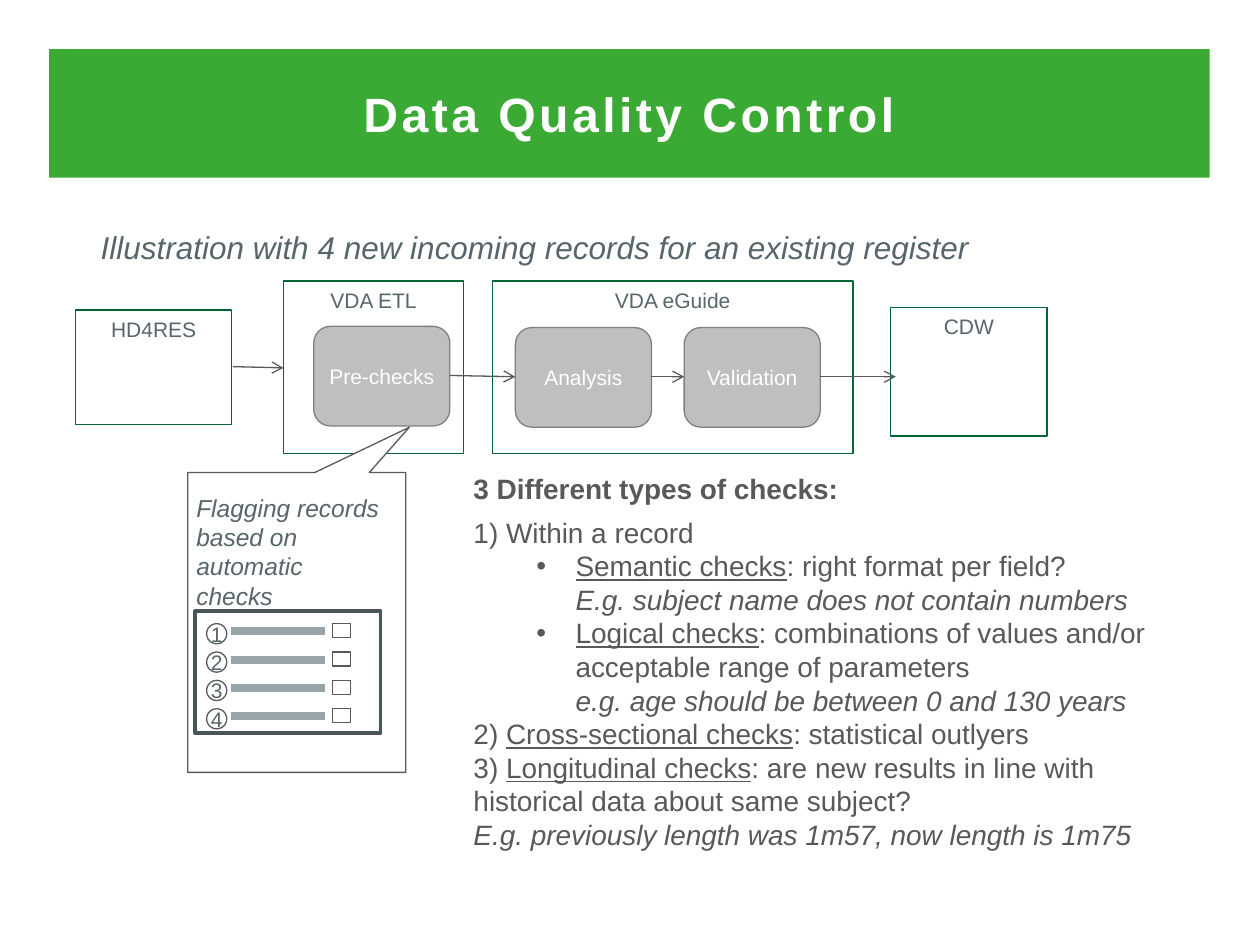
from lxml.etree import SubElement
from pptx import Presentation
from pptx.dml.color import RGBColor
from pptx.enum.shapes import MSO_CONNECTOR as Connector, MSO_SHAPE as Shape
from pptx.enum.text import MSO_ANCHOR as Anchor, MSO_AUTO_SIZE as AutoSize, PP_ALIGN as Align
from pptx.oxml.ns import qn
from pptx.util import Inches, Pt

WHITE = RGBColor(0xFF, 0xFF, 0xFF)
BAND_GREEN = RGBColor(0x3A, 0xAA, 0x35)
BOX_GREEN = RGBColor(0x00, 0x66, 0x33)
SLATE = RGBColor(0x58, 0x65, 0x6A)
DARK_SLATE = RGBColor(0x4A, 0x55, 0x59)
PALE_SLATE = RGBColor(0x97, 0xA4, 0xA9)
GRAY = RGBColor(0x58, 0x59, 0x5B)
STEP_FILL = RGBColor(0xBF, 0xBF, 0xBF)
STEP_LINE = RGBColor(0x80, 0x80, 0x80)

SYSTEMS = [
    ("VDA eGuide", (3.91, 2.23, 2.86, 1.37)),
    ("CDW", (7.07, 2.44, 1.24, 1.02)),
    ("VDA ETL", (2.25, 2.23, 1.43, 1.37)),
    ("HD4RES", (0.6, 2.46, 1.24, 0.91)),
]
STEPS = [("Pre-checks", 2.49, 2.59), ("Analysis", 4.09, 2.6), ("Validation", 5.43, 2.6)]
FLOWS = [
    ((1.85, 2.91), (2.25, 2.92)),
    ((3.57, 2.98), (4.09, 2.99)),
    ((5.17, 2.99), (5.43, 2.99)),
    ((6.51, 2.99), (7.11, 2.99)),
]
# Each paragraph: bulleted or not, then runs as (text, style letters b, i, u).
CHECKS = [
    (False, [("3 Different types of checks:", "b")]),
    (False, [("1) Within a record", "")]),
    (True, [("Semantic checks", "u"), (": right format per field? \n", ""),
            ("E.g. subject name does not contain numbers", "i")]),
    (True, [("Logical checks", "u"),
            (": combinations of values and/or acceptable range of parameters \n", ""),
            ("e.g. age should be between 0 and 130 years", "i")]),
    (False, [("2) ", ""), ("Cross-sectional checks", "u"), (": statistical outlyers", "")]),
    (False, [("3) ", ""), ("Longitudinal checks", "u"),
             (": are new results in line with historical data about same subject?\n", ""),
             ("E.g. previously length was 1m57, now length is 1m75", "i")]),
]


class SlideBuilder:
    font_name = "Arial"

    def __init__(self, slide):
        self.slide = slide

    def style(self, run, size, color, marks=""):
        font = run.font
        font.name, font.size = self.font_name, Pt(size)
        font.color.rgb = color
        font.bold, font.italic, font.underline = ("b" in marks, "i" in marks, "u" in marks)

    def label(self, frame, text, size, color, marks="", align=Align.CENTER, anchor=Anchor.TOP):
        frame.text = text
        frame.vertical_anchor = anchor
        paragraph = frame.paragraphs[0]
        paragraph.alignment = align
        self.style(paragraph.runs[0], size, color, marks)

    def shape(self, kind, box, fill=None, line=None, width=0.75):
        shape = self.slide.shapes.add_shape(kind, *map(Inches, box))
        shape.shadow.inherit = False
        if fill is None:
            shape.fill.background()
        else:
            shape.fill.solid()
            shape.fill.fore_color.rgb = fill
        if line is None:
            shape.line.fill.background()
        else:
            shape.line.color.rgb = line
            shape.line.width = Pt(width)
        return shape

    def text_box(self, box, wrap=True):
        frame = self.slide.shapes.add_textbox(*map(Inches, box)).text_frame
        frame.word_wrap = wrap
        frame.auto_size = AutoSize.NONE
        return frame

    def line(self, start, end, color, width=0.75, arrow=False):
        connector = self.slide.shapes.add_connector(
            Connector.STRAIGHT, *map(Inches, (*start, *end)))
        connector.line.color.rgb = color
        connector.line.width = Pt(width)
        properties = connector._element.spPr
        if arrow:
            SubElement(properties.find(qn("a:ln")), qn("a:tailEnd"), type="arrow")
        SubElement(properties, qn("a:effectLst"))

    def system(self, name, box):
        self.label(self.shape(Shape.RECTANGLE, box, line=BOX_GREEN).text_frame, name, 12, SLATE)

    def step(self, name, left, top):
        frame = self.shape(Shape.ROUNDED_RECTANGLE, (left, top, 1.08, 0.79),
                           STEP_FILL, STEP_LINE).text_frame
        frame.margin_left = frame.margin_right = Inches(0.04)
        frame.margin_top = frame.margin_bottom = Inches(0.04)
        self.label(frame, name, 12, WHITE, anchor=Anchor.MIDDLE)

    def record(self, number, top):
        """Draw one numbered record with its bar and check box."""
        self.line((1.83, top + 0.06), (2.58, top + 0.06), PALE_SLATE, 4.5)
        self.shape(Shape.RECTANGLE, (2.64, top, 0.14, 0.11), line=GRAY)
        self.shape(Shape.OVAL, (1.64, top, 0.16, 0.16), line=GRAY)
        frame = self.text_box((1.66, top - 0.07, 0.12, 0.3), wrap=False)
        frame.margin_left = frame.margin_right = 0
        self.label(frame, str(number), 12, SLATE, anchor=Anchor.MIDDLE)

    def bullet(self, paragraph):
        properties = paragraph._p.get_or_add_pPr()
        properties.set("marL", str(Inches(0.81)))
        properties.set("indent", str(Inches(-0.31)))
        SubElement(properties, qn("a:buFont"), typeface=self.font_name)
        SubElement(properties, qn("a:buChar"), char="•")

    def rich_text(self, box, paragraphs, size, color):
        frame = self.text_box(box)
        for index, (bulleted, runs) in enumerate(paragraphs):
            paragraph = frame.add_paragraph() if index else frame.paragraphs[0]
            if bulleted:
                paragraph.level = 1
                self.bullet(paragraph)
            for text, marks in runs:
                run = paragraph.add_run()
                run.text = text.rstrip("\n")
                self.style(run, size, color, marks)
                if text.endswith("\n"):
                    paragraph.add_line_break()
        frame.paragraphs[0].space_after = Pt(6)


def main():
    presentation = Presentation()
    presentation.slide_width, presentation.slide_height = Inches(10), Inches(7.5)
    builder = SlideBuilder(presentation.slides.add_slide(presentation.slide_layouts[6]))

    title_area = (0.39, 0.39, 9.21, 1.02)
    builder.shape(Shape.RECTANGLE, title_area, BAND_GREEN)
    title = builder.text_box(title_area)
    builder.label(title, "Data Quality Control", 27.5, WHITE, "b", anchor=Anchor.MIDDLE)
    title.paragraphs[0].runs[0]._r.get_or_add_rPr().set("spc", "200")

    builder.label(builder.text_box((0.7, 1.76, 7.61, 0.4)),
                  "Illustration with 4 new incoming records for an existing register",
                  18, SLATE, "i", Align.LEFT)

    for name, box in SYSTEMS:
        builder.system(name, box)
    for name, left, top in STEPS:
        builder.step(name, left, top)
    for start, end in FLOWS:
        builder.line(start, end, GRAY, arrow=True)

    callout = builder.shape(Shape.RECTANGULAR_CALLOUT, (1.49, 3.75, 1.73, 2.38), WHITE, GRAY)
    callout.adjustments[0], callout.adjustments[1] = 0.517, -0.651
    builder.shape(Shape.RECTANGLE, (1.55, 4.85, 1.47, 0.97), line=DARK_SLATE, width=2)
    for index in range(4):
        builder.record(index + 1, 4.95 + 0.225 * index)
    builder.label(builder.text_box((1.46, 3.86, 1.67, 0.81)),
                  "Flagging records based on automatic checks", 14, SLATE, "i", Align.LEFT)

    builder.rich_text((3.66, 3.69, 6.06, 3.15), CHECKS, 16, GRAY)
    presentation.save("out.pptx")


if __name__ == "__main__":
    main()
